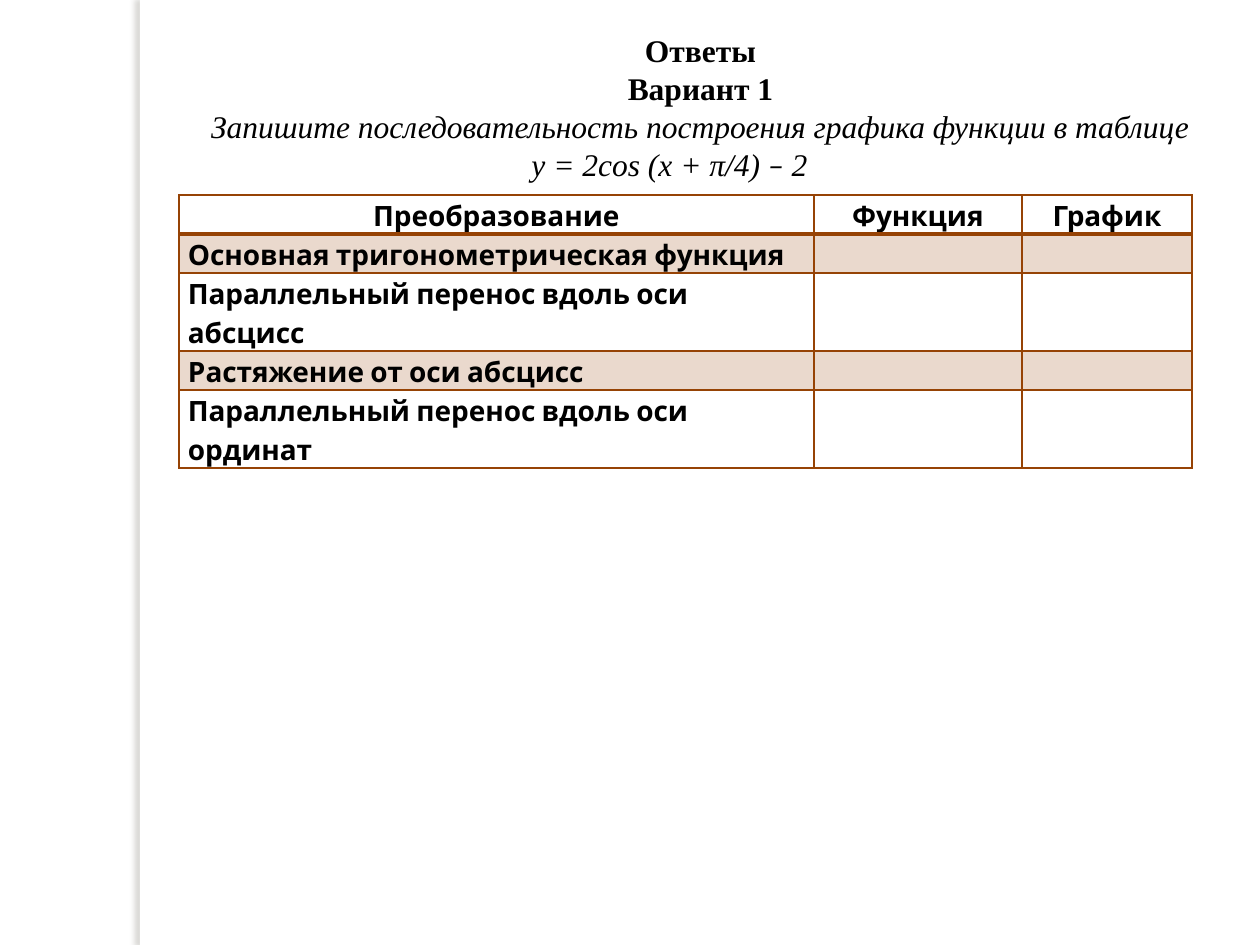
from lxml import etree
from pptx import Presentation
from pptx import util as u
from pptx.dml.color import RGBColor
from pptx.enum import shapes, text
from pptx.oxml import parse_xml
from pptx.oxml.ns import nsdecls, qn

PX = 914400 / 126
BROWN, BLACK, WHITE, SHADOW = "964305", "000000", "FFFFFF", "736F63"
COLUMNS = [635, 208, 170]
ROWS = [
    ("Преобразование", "Функция", "График"),
    ("Основная тригонометрическая функция", "", ""),
    ("Параллельный перенос вдоль оси абсцисс", "", ""),
    ("Растяжение от оси абсцисс", "", ""),
    ("Параллельный перенос вдоль оси ординат", "", ""),
]
ROW_HEIGHTS = [39, 39, 78, 39, 78]


def px(length):
    return u.Emu(round(length * PX))


def color(value):
    return RGBColor.from_string(value)


def style(span, font, size, bold=False, italic=False):
    span.font.name = font
    span.font.size = u.Pt(size)
    span.font.bold = bold
    span.font.italic = italic
    span.font.color.rgb = color(BLACK)


def add_side_strip(page, left, top, width, height):
    """White strip that casts a soft shadow to the left."""
    strip = page.shapes.add_shape(shapes.MSO_SHAPE.RECTANGLE,
                                  px(left), px(top), px(width), px(height))
    strip.fill.solid()
    strip.fill.fore_color.rgb = color(WHITE)
    strip.line.fill.background()
    strip._element.spPr.append(parse_xml(
        f'<a:effectLst {nsdecls("a")}>'
        f'<a:outerShdw blurRad="{u.Pt(3)}" dist="{u.Pt(3)}" dir="10800000" rotWithShape="0">'
        f'<a:srgbClr val="{SHADOW}"><a:alpha val="25000"/></a:srgbClr>'
        '</a:outerShdw></a:effectLst>'))


def add_heading(page, left, top, width, height):
    title = page.shapes.title
    title.left, title.top, title.width, title.height = map(px, (left, top, width, height))
    frame = title.text_frame
    frame.word_wrap = True
    frame.auto_size = text.MSO_AUTO_SIZE.NONE
    frame.vertical_anchor = text.MSO_ANCHOR.TOP
    frame.text = "Ответы\nВариант 1\n"
    task = frame.paragraphs[-1]
    for part in ("Запишите последовательность построения графика функции в таблице "
                 "y = 2cos (х + π/4) ", "–", " 2"):
        task.add_run().text = part
    for para in frame.paragraphs:
        para.alignment = text.PP_ALIGN.CENTER
        para.line_spacing = u.Pt(21.7)
        para._p.get_or_add_pPr().set("indent", str(px(62)))
        for span in para.runs:
            font = "Calibri" if span.text == "–" else "Times New Roman"
            style(span, font, 18, bold=para is not task and span.text in ("Ответы", "Вариант 1"),
                  italic=span.text not in ("Ответы", "Вариант 1"))


def set_borders(cell, **widths):
    properties = cell._tc.get_or_add_tcPr()
    for side in "LRTB":
        line = etree.SubElement(properties, qn(f"a:ln{side}"), w=str(u.Pt(widths.get(side, 1))))
        fill = etree.SubElement(line, qn("a:solidFill"))
        etree.SubElement(fill, qn("a:srgbClr"), val=BROWN)


def fill_cell(cell, shaded):
    if not shaded:
        cell.fill.background()
        return
    cell.fill.solid()
    cell.fill.fore_color.rgb = color(BROWN)
    tint = cell._tc.tcPr.find(qn("a:solidFill")).find(qn("a:srgbClr"))
    etree.SubElement(tint, qn("a:alpha"), val="20000")


def add_answer_table(page, left, top):
    frame = page.shapes.add_table(len(ROWS), len(COLUMNS), px(left), px(top),
                                  px(sum(COLUMNS)), px(sum(ROW_HEIGHTS)))
    table = frame.table
    table.first_row = table.horz_banding = False
    for column, width in zip(table.columns, COLUMNS):
        column.width = px(width)
    for index, (row, height, words) in enumerate(zip(table.rows, ROW_HEIGHTS, ROWS)):
        row.height = px(height)
        for cell, word in zip(row.cells, words):
            cell.margin_left = cell.margin_right = px(9)
            cell.margin_top = cell.margin_bottom = 0
            set_borders(cell, T=2 if index == 1 else 1, B=2 if index == 0 else 1)
            fill_cell(cell, shaded=index % 2 == 1)
            if not word:
                continue
            cell.text = word
            para = cell.text_frame.paragraphs[0]
            para.line_spacing = 1.15
            para.alignment = text.PP_ALIGN.LEFT if index else text.PP_ALIGN.CENTER
            style(para.runs[0], "Cabin", 16, bold=True)


def main():
    deck = Presentation()
    deck.slide_width, deck.slide_height = px(1260), px(945)
    page = deck.slides.add_slide(deck.slide_layouts[5])
    add_side_strip(page, 140, 0, 10, 945)
    add_answer_table(page, 179, 195)
    add_heading(page, 134, 24, 1071, 195)
    deck.save("out.pptx")


if __name__ == "__main__":
    main()
